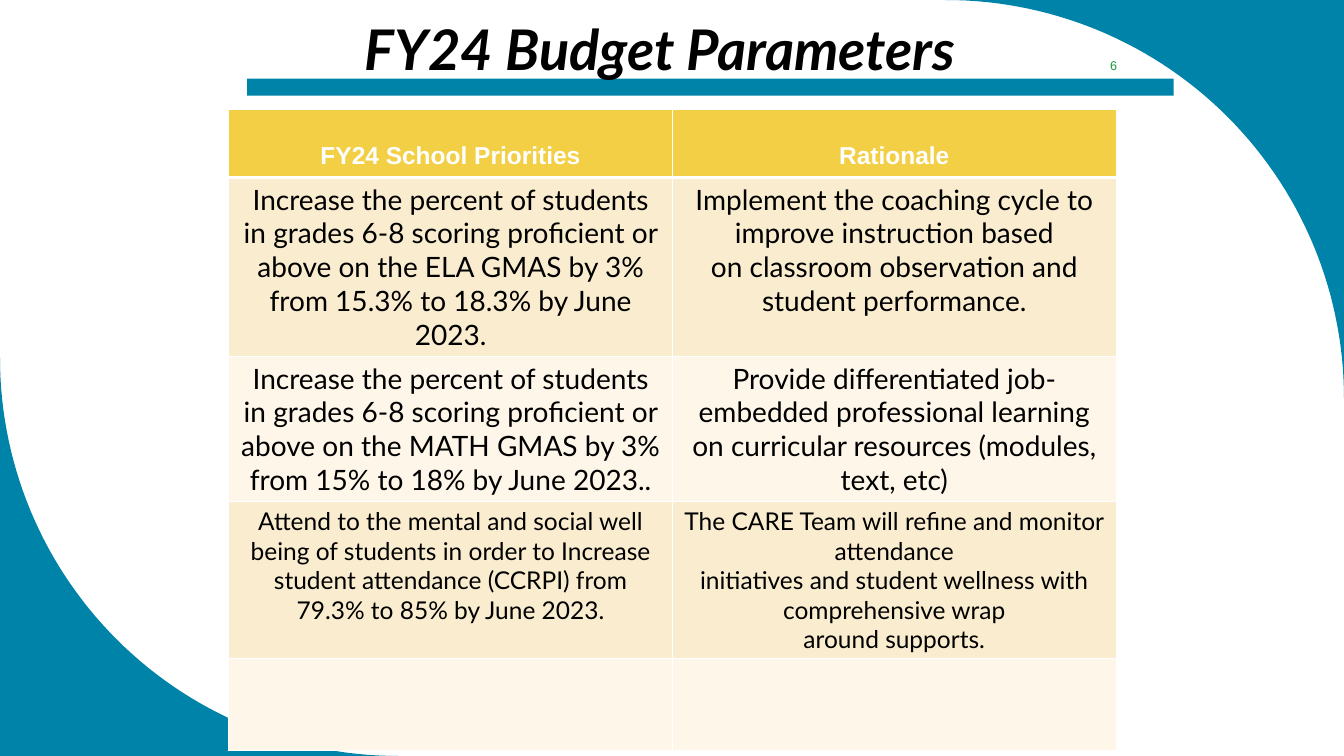
import math
from dataclasses import dataclass

from lxml import etree
from pptx import Presentation
from pptx.dml.color import RGBColor
from pptx.enum.shapes import MSO_SHAPE
from pptx.enum.text import MSO_ANCHOR, PP_ALIGN
from pptx.oxml.ns import qn
from pptx.util import Inches, Pt

RECTANGLE = MSO_SHAPE.RECTANGLE
TOP, MIDDLE, BOTTOM = MSO_ANCHOR.TOP, MSO_ANCHOR.MIDDLE, MSO_ANCHOR.BOTTOM
CENTER = PP_ALIGN.CENTER
TITLE_ONLY = 5


@dataclass(frozen=True)
class Theme:
    heading_font: str = "Lato"
    label_font: str = "Arial"
    accent: str = "0083A9"
    ink: str = "000000"
    white: str = "FFFFFF"
    header: str = "F3CF45"
    bands: tuple = ("FAEDCF", "FDF6E9")
    number: str = "159839"
    title_size: float = 40
    body_size: float = 20
    small_size: float = 17.5
    number_size: float = 9


def write_text(frame, text, *, font, size, color, bold=False, italic=False):
    """Fill a text frame with centred text, one paragraph per line."""
    frame.word_wrap = True
    for index, line in enumerate(text.split("\n")):
        paragraph = frame.paragraphs[0] if index == 0 else frame.add_paragraph()
        paragraph.alignment = CENTER
        run = paragraph.add_run()
        run.text = line
        run.font.name = font
        run.font.size = Pt(size)
        run.font.bold = bold
        run.font.italic = italic
        run.font.color.rgb = RGBColor.from_string(color)


class SlideBuilder:
    def __init__(self, presentation, theme):
        self.theme = theme
        self.slide = presentation.slides.add_slide(presentation.slide_layouts[TITLE_ONLY])

    def paint(self, shape):
        shape.shadow.inherit = False
        shape.fill.solid()
        shape.fill.fore_color.rgb = RGBColor.from_string(self.theme.accent)
        shape.line.fill.background()

    def corner(self, center, radius, start_angle, tip, steps=60):
        """Fill the area between a quarter circle and a slide corner."""
        points = []
        for step in range(steps + 1):
            angle = math.radians(start_angle + 90 * step / steps)
            points.append((Inches(center[0] + radius * math.cos(angle)),
                           Inches(center[1] + radius * math.sin(angle))))
        points.append((Inches(tip[0]), Inches(tip[1])))
        builder = self.slide.shapes.build_freeform(*points[0])
        builder.add_line_segments(points[1:], close=True)
        self.paint(builder.convert_to_shape())

    def bar(self, left, top, width, height):
        self.paint(self.slide.shapes.add_shape(
            RECTANGLE, Inches(left), Inches(top), Inches(width), Inches(height)))

    def title(self, text, left, top, width, height):
        title = self.slide.shapes.title
        title.left, title.top = Inches(left), Inches(top)
        title.width, title.height = Inches(width), Inches(height)
        title.text_frame.vertical_anchor = TOP
        write_text(title.text_frame, text, font=self.theme.heading_font,
                   size=self.theme.title_size, color=self.theme.ink, bold=True, italic=True)
        # Bring the title in front of the bar
        title.element.getparent().append(title.element)

    def page_number(self, text, left, top, width, height):
        box = self.slide.shapes.add_textbox(
            Inches(left), Inches(top), Inches(width), Inches(height))
        box.text_frame.vertical_anchor = MIDDLE
        write_text(box.text_frame, text, font=self.theme.label_font,
                   size=self.theme.number_size, color=self.theme.number)

    def borders(self, cell, top, bottom):
        properties = cell._tc.get_or_add_tcPr()
        widths = {"a:lnL": 1, "a:lnR": 1, "a:lnT": top, "a:lnB": bottom}
        for index, (tag, width) in enumerate(widths.items()):
            line = etree.Element(qn(tag), w=str(Pt(width)))
            fill = etree.SubElement(line, qn("a:solidFill"))
            etree.SubElement(fill, qn("a:srgbClr"), val=self.theme.white)
            properties.insert(index, line)

    def table(self, rows, left, top, column_width, heights, sizes):
        theme = self.theme
        columns = len(rows[0])
        table = self.slide.shapes.add_table(
            len(rows), columns, Inches(left), Inches(top),
            Inches(column_width * columns), Inches(sum(heights))).table
        table.horz_banding = False
        for column in table.columns:
            column.width = Inches(column_width)
        for row_index, texts in enumerate(rows):
            is_header = row_index == 0
            table.rows[row_index].height = Inches(heights[row_index])
            color = theme.header if is_header else theme.bands[(row_index - 1) % 2]
            for column_index, text in enumerate(texts):
                cell = table.cell(row_index, column_index)
                cell.fill.solid()
                cell.fill.fore_color.rgb = RGBColor.from_string(color)
                self.borders(cell, top=3 if row_index == 1 else 1,
                             bottom=3 if is_header else 1)
                if is_header:
                    cell.vertical_anchor = BOTTOM
                    cell.margin_bottom = Inches(0.08)
                if text:
                    write_text(cell.text_frame, text, size=sizes[row_index], bold=is_header,
                               font=theme.label_font if is_header else theme.heading_font,
                               color=theme.white if is_header else theme.ink)


PRIORITIES = [
    ("FY24 School Priorities", "Rationale"),
    ("Increase the percent of students in grades 6-8 scoring proficient or above "
     "on the ELA GMAS by 3% from 15.3% to 18.3% by June 2023.",
     "Implement the coaching cycle to improve instruction based\n"
     "on classroom observation and student performance."),
    ("Increase the percent of students in grades 6-8 scoring proficient or above "
     "on the MATH GMAS by 3% from 15% to 18% by June 2023..",
     "Provide differentiated job-embedded professional learning\n"
     "on curricular resources (modules, text, etc)"),
    ("Attend to the mental and social well being of students in order to Increase "
     "student attendance (CCRPI) from 79.3% to 85% by June 2023.",
     "The CARE Team will refine and monitor attendance\n"
     "initiatives and student wellness with comprehensive wrap\n"
     "around supports."),
    ("", ""),
]


def main():
    presentation = Presentation()
    presentation.slide_width, presentation.slide_height = Inches(13.33), Inches(7.5)
    theme = Theme()
    builder = SlideBuilder(presentation, theme)

    # Rounded corners
    builder.corner(center=(9.38, 3.95), radius=3.95, start_angle=-90, tip=(13.33, 0))
    builder.corner(center=(3.95, 3.55), radius=3.95, start_angle=90, tip=(0, 7.5))

    # Heading
    builder.bar(2.45, 0.78, 9.19, 0.17)
    builder.title("FY24 Budget Parameters", 3.05, 0.09, 6.99, 0.77)

    # Priorities table
    small, body = theme.small_size, theme.body_size
    builder.table(PRIORITIES, left=2.27, top=1.09, column_width=4.4,
                  heights=[0.67, 1.48, 1.2, 1.11, 0.91],
                  sizes=[small, body, body, small, small])

    # Page number
    builder.page_number("6", 10.64, 0.5, 0.81, 0.3)

    presentation.save("out.pptx")


if __name__ == "__main__":
    main()
